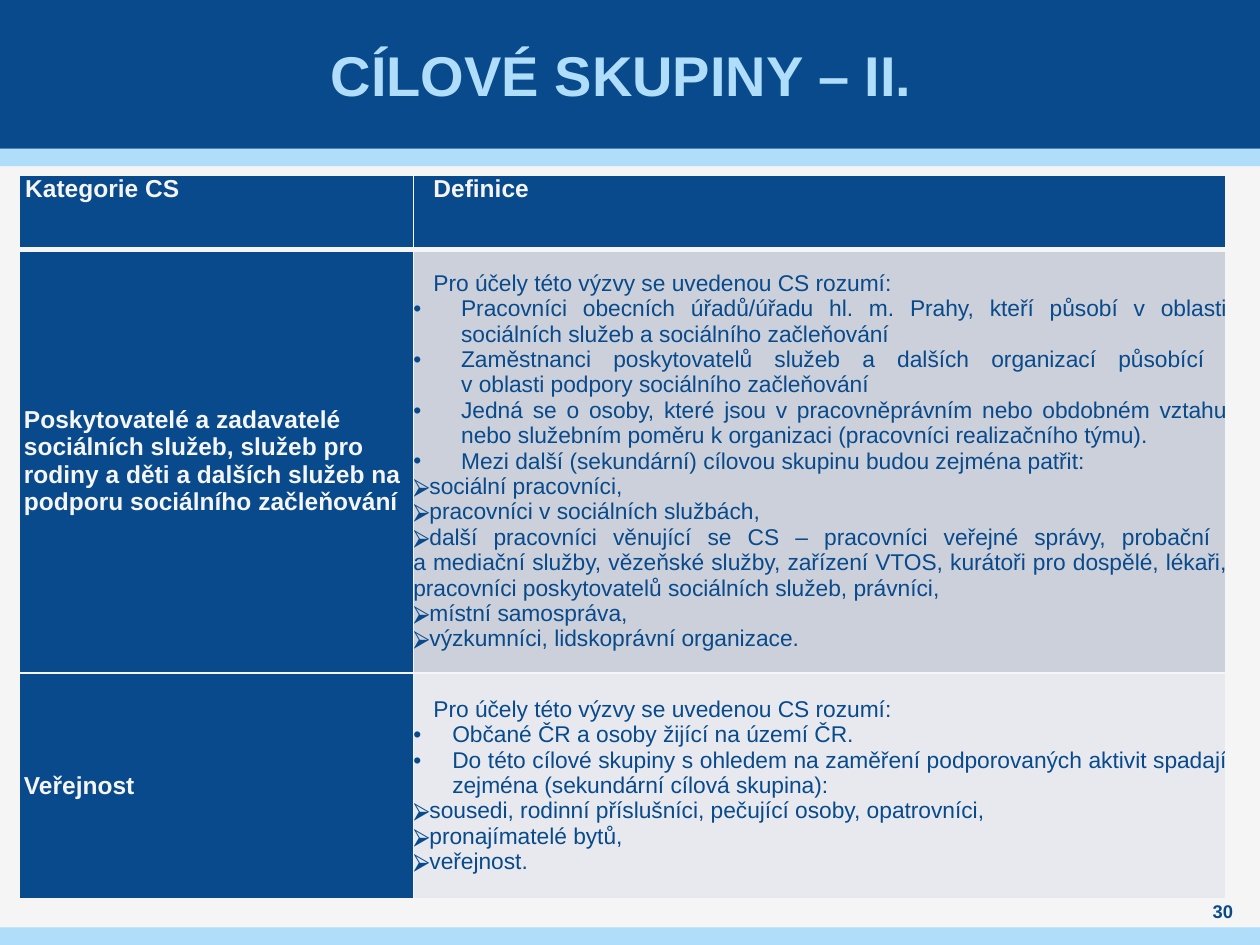
from lxml.etree import SubElement
from pptx import Presentation
from pptx.dml.color import RGBColor
from pptx.enum.shapes import MSO_SHAPE
from pptx.enum.text import MSO_ANCHOR, PP_ALIGN
from pptx.oxml.ns import qn
from pptx.util import Inches, Pt

NAVY, SKY, PAPER = "084A8B", "AFDDFA", "F5F5F5"
FONT = "Arial"

# Paragraphs are (kind, text); kinds map to (left margin, first-line indent).
INDENTS = {
    "heading": (0.05, 0),
    "category": (0.04, 0),
    "intro": (0.16, 0),
    "bullet": (0.38, -0.38),
    "short bullet": (0.31, -0.31),
    "arrow": (0, 0),
}
INTRO = ("intro", "Pro účely této výzvy se uvedenou CS rozumí: ")
HEADINGS = (("heading", "Kategorie CS"), ("intro", "Definice"))
GROUPS = [
    (
        "Poskytovatelé a zadavatelé sociálních služeb, služeb pro rodiny a děti "
        "a dalších služeb na podporu sociálního začleňování",
        "CCD0DA",
        [
            INTRO,
            ("bullet", "Pracovníci obecních úřadů/úřadu hl. m. Prahy, kteří působí "
                       "v oblasti sociálních služeb a sociálního začleňování"),
            ("bullet", "Zaměstnanci poskytovatelů služeb a dalších organizací působící \n"
                       "v oblasti podpory sociálního začleňování"),
            ("bullet", "Jedná se o osoby, které jsou v pracovněprávním nebo obdobném vztahu "
                       "nebo služebním poměru k organizaci (pracovníci realizačního týmu). "),
            ("bullet", "Mezi další (sekundární) cílovou skupinu budou zejména patřit:"),
            ("arrow", "⮚sociální pracovníci,"),
            ("arrow", "⮚pracovníci v sociálních službách,"),
            ("arrow", "⮚další pracovníci věnující se CS – pracovníci veřejné správy, probační \n"
                      "a mediační služby, vězeňské služby, zařízení VTOS, kurátoři pro dospělé, "
                      "lékaři, pracovníci poskytovatelů sociálních služeb, právníci, "),
            ("arrow", "⮚místní samospráva, "),
            ("arrow", "⮚výzkumníci, lidskoprávní organizace."),
        ],
    ),
    (
        "Veřejnost",
        "E7E9EE",
        [
            INTRO,
            ("short bullet", "Občané ČR a osoby žijící na území ČR."),
            ("short bullet", "Do této cílové skupiny s ohledem na zaměření podporovaných aktivit "
                             "spadají zejména (sekundární cílová skupina):"),
            ("arrow", "⮚sousedi, rodinní příslušníci, pečující osoby, opatrovníci, "),
            ("arrow", "⮚pronajímatelé bytů,"),
            ("arrow", "⮚veřejnost."),
        ],
    ),
]


def rgb(color):
    return RGBColor.from_string(color)


def add_text(paragraph, text, size, color, bold):
    """Add one run per line of text, with line breaks between them."""
    for index, line in enumerate(text.split("\n")):
        if index:
            paragraph.add_line_break()
        run = paragraph.add_run()
        run.text = line
        run.font.name = FONT
        run.font.size = Pt(size)
        run.font.bold = bold
        run.font.color.rgb = rgb(color)


def set_insets(target, side=0):
    target.margin_left = target.margin_right = Inches(side)
    target.margin_top = target.margin_bottom = 0


def set_indent(paragraph, kind):
    margin, first_line = INDENTS[kind]
    props = paragraph._p.get_or_add_pPr()
    props.set("marL", str(Inches(margin)))
    props.set("indent", str(Inches(first_line)))
    if "bullet" in kind:
        SubElement(props, qn("a:buFont"), typeface=FONT)
        SubElement(props, qn("a:buChar"), char="•")
    else:
        SubElement(props, qn("a:buNone"))


def set_borders(cell, bottom):
    props = cell._tc.get_or_add_tcPr()
    for side, width in (("L", 1), ("R", 1), ("T", 1), ("B", bottom)):
        line = SubElement(props, qn(f"a:ln{side}"), w=str(Pt(width)))
        SubElement(SubElement(line, qn("a:solidFill")), qn("a:srgbClr"), val=PAPER)


def fill_cell(cell, paragraphs, fill, size, color, bold, justify, header=False):
    set_insets(cell)
    cell.vertical_anchor = MSO_ANCHOR.TOP if header else MSO_ANCHOR.MIDDLE
    set_borders(cell, bottom=3 if header else 1)
    cell.fill.solid()
    cell.fill.fore_color.rgb = rgb(fill)
    frame = cell.text_frame
    for index, (kind, text) in enumerate(paragraphs):
        paragraph = frame.add_paragraph() if index else frame.paragraphs[0]
        paragraph.alignment = PP_ALIGN.JUSTIFY if justify else PP_ALIGN.LEFT
        set_indent(paragraph, kind)
        add_text(paragraph, text, size, color, bold)


def add_band(slide, top, height, color):
    band = slide.shapes.add_shape(
        MSO_SHAPE.RECTANGLE, 0, Inches(top), Inches(10), Inches(height))
    band.shadow.inherit = False
    band.fill.solid()
    band.fill.fore_color.rgb = rgb(color)
    band.line.fill.background()


def add_header(slide, height):
    add_band(slide, height, 0.14, SKY)
    add_band(slide, 0, height, NAVY)
    title = slide.shapes.title
    slide.shapes._spTree.append(title._element)  # in front of the bands
    title.left, title.top = Inches(0.39), 0
    title.width, title.height = Inches(9.21), Inches(height)
    frame = title.text_frame
    set_insets(frame, side=0.04)
    frame.vertical_anchor = MSO_ANCHOR.MIDDLE
    frame.paragraphs[0].alignment = PP_ALIGN.CENTER
    add_text(frame.paragraphs[0], "CÍLOVÉ SKUPINY – II. ", 32, SKY, True)


def add_groups_table(slide, left, top, widths, heights):
    table = slide.shapes.add_table(
        len(heights), len(widths), Inches(left), Inches(top),
        Inches(sum(widths)), Inches(sum(heights))).table
    for column, width in zip(table.columns, widths):
        column.width = Inches(width)
    for row, height in zip(table.rows, heights):
        row.height = Inches(height)
    for column, heading in enumerate(HEADINGS):
        fill_cell(table.cell(0, column), [heading], NAVY, 14, PAPER, True,
                  justify=column == 1, header=True)
    for row, (category, fill, definition) in enumerate(GROUPS, start=1):
        fill_cell(table.cell(row, 0), [("category", category)], NAVY, 14, PAPER, True,
                  justify=False)
        fill_cell(table.cell(row, 1), definition, fill, 13, NAVY, False, justify=True)


def add_footer(slide, top):
    add_band(slide, top, 0.14, SKY)
    number = slide.shapes.add_textbox(
        Inches(9.45), Inches(top - 0.23), Inches(0.51), Inches(0.2))
    frame = number.text_frame
    frame.word_wrap = True
    set_insets(frame)
    frame.vertical_anchor = MSO_ANCHOR.MIDDLE
    frame.paragraphs[0].alignment = PP_ALIGN.CENTER
    add_text(frame.paragraphs[0], "30", 10.5, NAVY, True)


def main():
    deck = Presentation()
    deck.slide_width, deck.slide_height = Inches(10), Inches(7.5)
    slide = deck.slides.add_slide(deck.slide_layouts[5])
    slide.background.fill.solid()
    slide.background.fill.fore_color.rgb = rgb(PAPER)
    add_header(slide, height=1.18)
    add_groups_table(slide, 0.15, 1.39, widths=(3.13, 6.45), heights=(0.59, 3.36, 1.79))
    add_footer(slide, top=7.36)
    deck.save("out.pptx")


if __name__ == "__main__":
    main()
